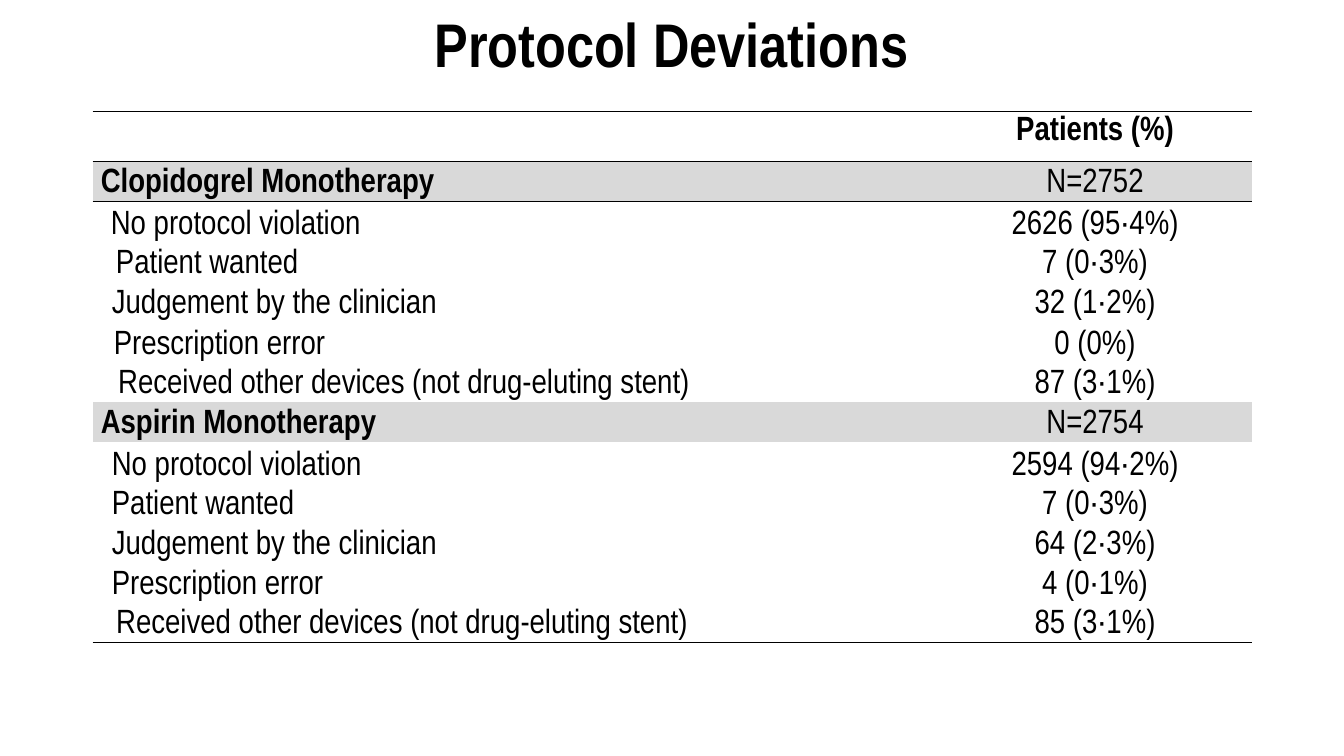
from dataclasses import dataclass

import pptx
import pptx.dml.color
import pptx.enum.text
import pptx.oxml
import pptx.oxml.ns
import pptx.util

Pt = pptx.util.Pt
ALIGN = pptx.enum.text.PP_ALIGN
FONT = "Arial Narrow"
BLACK = pptx.dml.color.RGBColor(0x00, 0x00, 0x00)
GREY = pptx.dml.color.RGBColor(0xD9, 0xD9, 0xD9)
NO_STYLE = "{2D5ABB26-0587-4C30-8999-92F81FD0307C}"
COUNT_INDENT = 63.3


@dataclass
class Row:
    label: str
    count: str
    indent: float
    spacing: float
    height: float = 28.8
    group: bool = False
    borders: str = ""


ROWS = [
    Row("Clopidogrel Monotherapy", "N=2752", 5.8, 27.4, group=True, borders="TB"),
    Row("No protocol violation", "2626 (95·4%)", 13, 28.2),
    Row("Patient wanted", "7 (0·3%)", 16.6, 27.6),
    Row("Judgement by the clinician", "32 (1·2%)", 13.7, 27.5),
    Row("Prescription error", "0 (0%)", 15.1, 27.5),
    Row("Received other devices (not drug-eluting stent)", "87 (3·1%)", 18.2, 26.6, 28),
    Row("Aspirin Monotherapy", "N=2754", 5.8, 27.4, group=True),
    Row("No protocol violation", "2594 (94·2%)", 13.7, 28.4),
    Row("Patient wanted", "7 (0·3%)", 13.7, 27.6),
    Row("Judgement by the clinician", "64 (2·3%)", 13.7, 27.5),
    Row("Prescription error", "4 (0·1%)", 13.7, 27.5),
    Row("Received other devices (not drug-eluting stent)", "85 (3·1%)", 16.8, 26.4, 27.4, borders="B"),
]


def format_run(r, size: float, bold: bool) -> None:
    r.font.name = FONT
    r.font.size = Pt(size)
    r.font.bold = bold
    r.font.color.rgb = BLACK


def set_text(cell, text: str, indent: float, bold: bool, align: ALIGN,
             spacing: float | None = None, top: float = 0) -> None:
    cell.margin_left = cell.margin_right = cell.margin_bottom = 0
    cell.margin_top = Pt(top)
    p = cell.text_frame.paragraphs[0]
    p.text = text
    p.alignment = align
    if spacing:
        p.line_spacing = Pt(spacing)
    p._p.get_or_add_pPr().set("marL", str(Pt(indent)))
    format_run(p.runs[0], 24, bold)


def set_borders(cell, sides: str) -> None:
    tc_pr = cell._tc.get_or_add_tcPr()
    for i, side in enumerate(sides):
        line = pptx.oxml.parse_xml(
            f'<a:ln{side} {pptx.oxml.ns.nsdecls("a")} w="{Pt(1)}">'
            f'<a:solidFill><a:srgbClr val="{BLACK}"/></a:solidFill></a:ln{side}>')
        tc_pr.insert(i, line)


def set_fill(cell, group: bool) -> None:
    if group:
        cell.fill.solid()
        cell.fill.fore_color.rgb = GREY
    else:
        cell.fill.background()


def add_title(s) -> None:
    sp = s.shapes.title
    sp.left, sp.top, sp.width, sp.height = Pt(309.6), Pt(1.4), Pt(340.6), Pt(55.4)
    tf = sp.text_frame
    tf.margin_left = tf.margin_right = tf.margin_bottom = 0
    tf.margin_top = Pt(2.7)
    tf.vertical_anchor = pptx.enum.text.MSO_ANCHOR.TOP
    tf.word_wrap = False
    tf.auto_size = pptx.enum.text.MSO_AUTO_SIZE.NONE
    tf.text = "Protocol Deviations"
    p = tf.paragraphs[0]
    p.alignment = ALIGN.CENTER
    format_run(p.runs[0], 44, True)


def add_deviation_table(s) -> None:
    frame = s.shapes.add_table(len(ROWS) + 1, 2, Pt(66.2), Pt(79.9), Pt(828), Pt(378))
    table = frame.table
    table.first_row = table.horz_banding = False
    table._tbl.tblPr.find(pptx.oxml.ns.qn("a:tableStyleId")).text = NO_STYLE
    table.columns[0].width = Pt(540.7)
    table.columns[1].width = Pt(287.3)

    table.rows[0].height = Pt(35.4)
    set_text(table.cell(0, 1), "Patients (%)", COUNT_INDENT, True, ALIGN.CENTER, top=3)
    for cell in table.rows[0].cells:
        set_fill(cell, False)
        set_borders(cell, "TB")

    for i, row in enumerate(ROWS, start=1):
        table.rows[i].height = Pt(row.height)
        label, count = table.cell(i, 0), table.cell(i, 1)
        set_text(label, row.label, row.indent, row.group, ALIGN.LEFT, row.spacing)
        set_text(count, row.count, COUNT_INDENT, False, ALIGN.CENTER, row.spacing)
        for cell in (label, count):
            set_fill(cell, row.group)
            set_borders(cell, row.borders)


def main() -> None:
    prs = pptx.Presentation()
    prs.slide_width, prs.slide_height = Pt(960), Pt(540)
    s = prs.slides.add_slide(prs.slide_layouts[5])
    add_title(s)
    add_deviation_table(s)
    prs.save("out.pptx")


if __name__ == "__main__":
    main()
